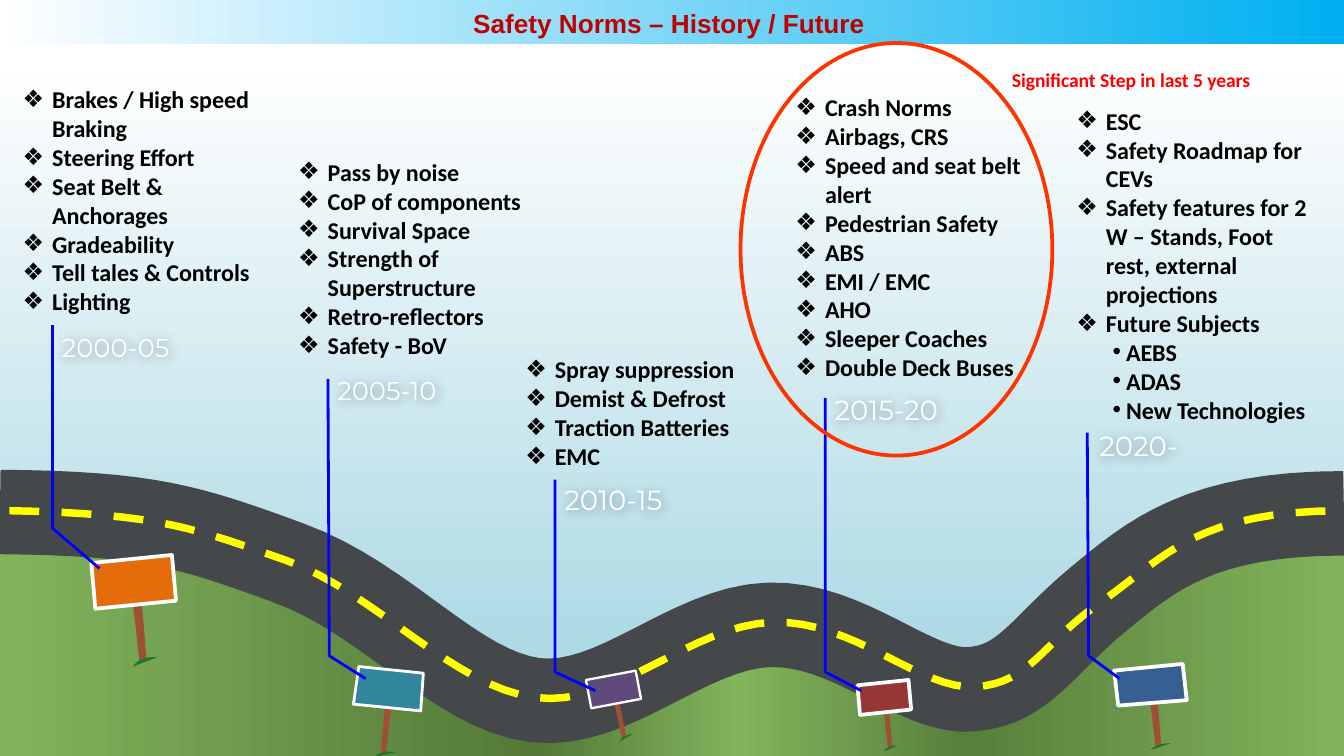
from dataclasses import dataclass

from lxml import etree
from pptx import Presentation
from pptx.dml.color import RGBColor
from pptx.enum.dml import MSO_LINE
from pptx.enum.shapes import MSO_SHAPE
from pptx.enum.text import MSO_ANCHOR, PP_ALIGN
from pptx.oxml.ns import qn
from pptx.util import Cm, Pt

RECT, OVAL = MSO_SHAPE.RECTANGLE, MSO_SHAPE.OVAL
DASH, TOP = MSO_LINE.DASH, MSO_ANCHOR.TOP
LEFT, MID = PP_ALIGN.LEFT, PP_ALIGN.CENTER

WHITE, BLACK = RGBColor(255, 255, 255), RGBColor(0, 0, 0)
SKY, HAZE = RGBColor(0xAE, 0xDA, 0xE5), RGBColor(0xC9, 0xE6, 0xEE)
CYAN = RGBColor(0x00, 0xB0, 0xF0)
GRASS, MOSS = RGBColor(0x82, 0xB4, 0x5C), RGBColor(0x54, 0x79, 0x38)
FERN, LEAF = RGBColor(0x58, 0x7F, 0x3B), RGBColor(0x1E, 0x76, 0x2D)
ROAD, YELLOW = RGBColor(0x45, 0x48, 0x4A), RGBColor(255, 255, 0)
WOOD, BLUE = RGBColor(0xA0, 0x4F, 0x37), RGBColor(0, 0, 255)
RED, WINE = RGBColor(255, 0, 0), RGBColor(0xC0, 0, 0)
FLAME = RGBColor(255, 0x33, 0)

Point = tuple[float, float]
Box = tuple[float, float, float, float]


@dataclass
class Stage:
    year: str
    size: float
    tag: Box
    area: Box
    items: list[str]
    color: RGBColor
    edge: float
    plate: list[Point]
    post: list[Point]
    tuft: list[Point]
    lead: list[Point]
    subs: tuple[str, ...] = ()


STAGES = [
    Stage("2000-05", 13.8, (0.39, 2.48, 0.98, 0.26), (0.07, 0.58, 2.01, 1.84),
          ["Brakes / High speed Braking", "Steering Effort", "Seat Belt & Anchorages",
           "Gradeability", "Tell tales & Controls", "Lighting"],
          RGBColor(0xE4, 0x6C, 0x0A), 2,
          [(1.28, 4.13), (0.68, 4.19), (0.71, 4.53), (1.31, 4.47)],
          [(1.09, 4.91), (1.04, 4.94), (0.98, 4.41), (1.05, 4.41)],
          [(1.17, 4.89), (1.03, 4.88), (0.99, 4.96)],
          [(0.74, 4.23), (0.39, 3.93), (0.39, 2.42)]),
    Stage("2005-10", 13.8, (2.44, 2.8, 0.98, 0.26), (2.12, 1.12, 2.01, 1.62),
          ["Pass by noise", "CoP of components", "Survival Space",
           "Strength of Superstructure", "Retro-reflectors", "Safety - BoV"],
          RGBColor(0x31, 0x85, 0x9C), 1.5,
          [(3.15, 5.01), (2.67, 4.96), (2.63, 5.24), (3.13, 5.29)],
          [(2.87, 5.61), (2.83, 5.63), (2.87, 5.19), (2.92, 5.2)],
          [(2.94, 5.6), (2.84, 5.57), (2.79, 5.63)],
          [(2.72, 5.05), (2.45, 4.88), (2.44, 2.82)]),
    Stage("2010-15", 14.8, (4.13, 3.61, 1.04, 0.27), (3.81, 2.59, 2.01, 0.97),
          ["Spray suppression", "Demist & Defrost", "Traction Batteries", "EMC"],
          RGBColor(0x60, 0x4A, 0x7B), 1.25,
          [(4.73, 4.99), (4.36, 5.06), (4.4, 5.27), (4.77, 5.2)],
          [(4.66, 5.48), (4.63, 5.5), (4.56, 5.18), (4.6, 5.18)],
          [(4.71, 5.46), (4.63, 5.47), (4.61, 5.52)],
          [(4.43, 5.14), (4.13, 5), (4.13, 3.57)]),
    Stage("2015-20", 14.8, (6.14, 2.94, 1.04, 0.27), (5.82, 0.64, 2.01, 2.28),
          ["Crash Norms", "Airbags, CRS", "Speed and seat belt alert",
           "Pedestrian Safety", "ABS", "EMI / EMC", "AHO", "Sleeper Coaches",
           "Double Deck Buses"],
          RGBColor(0x95, 0x37, 0x35), 2,
          [(6.76, 5.06), (6.38, 5.1), (6.4, 5.32), (6.78, 5.28)],
          [(6.64, 5.56), (6.61, 5.58), (6.57, 5.25), (6.61, 5.24)],
          [(6.68, 5.55), (6.6, 5.54), (6.58, 5.59)],
          [(6.41, 5.14), (6.14, 5), (6.14, 2.96)]),
    Stage("2020-", 14.8, (8.11, 3.21, 0.76, 0.27), (7.91, 0.74, 2.01, 2.49),
          ["ESC", "Safety Roadmap for CEVs",
           "Safety features for 2 W – Stands, Foot rest, external projections",
           "Future Subjects"],
          RGBColor(0x37, 0x60, 0x92), 2,
          [(8.8, 4.94), (8.29, 4.99), (8.32, 5.25), (8.83, 5.21)],
          [(8.64, 5.55), (8.6, 5.57), (8.55, 5.16), (8.61, 5.16)],
          [(8.71, 5.53), (8.6, 5.53), (8.56, 5.58)],
          [(8.33, 5.05), (8.1, 4.88), (8.09, 3.22)],
          ("AEBS", "ADAS", "New Technologies")),
]
HILLS = [(0, 3.73), (1.42, 3.83), (3.3, 4.64), (4.09, 5.11), (5.66, 4.46),
         (7.2, 5.08), (8.76, 4.02), (10, 3.73), (10, 5.7), (0, 5.7)]
TRACK = [(0, 3.81), (1.12, 3.82), (1.41, 3.92), (2.15, 4.19), (2.89, 4.46),
         (3.38, 5.13), (3.98, 5.21), (4.57, 5.28), (5.12, 4.67), (5.72, 4.65),
         (6.32, 4.63), (6.81, 5.16), (7.22, 5.13), (7.62, 5.1), (7.74, 4.82),
         (8.16, 4.47), (8.57, 4.13), (8.93, 3.82), (10, 3.82)]
LANE = [(0.07, 3.8), (1.2, 3.82), (1.47, 3.94), (2.13, 4.17), (2.78, 4.4),
        (3.37, 5.11), (3.98, 5.19), (4.58, 5.27), (5.14, 4.65), (5.75, 4.63),
        (6.35, 4.61), (6.85, 5.14), (7.26, 5.11), (7.68, 5.08), (7.75, 4.78),
        (8.22, 4.46), (8.68, 4.13), (8.92, 3.8), (10, 3.8)]


def inch(num: float) -> Cm:
    return Cm(2.54 * num)


def curve(knots: list[Point], steps: int = 16) -> list[Point]:
    """Sample a chain of cubic curves that share their end knots."""
    out = [knots[0]]
    for i in range(0, len(knots) - 1, 3):
        part = knots[i:i + 4]
        for n in range(1, steps + 1):
            t = n / steps
            mix = ((1 - t) ** 3, 3 * t * (1 - t) ** 2, 3 * t * t * (1 - t), t ** 3)
            out.append(tuple(sum(m * p[k] for m, p in zip(mix, part)) for k in (0, 1)))
    return out


def paint(shape, fill=None, line=None, width: float = 1):
    shape.shadow.inherit = False
    if fill is None:
        shape.fill.background()
    else:
        shape.fill.solid()
        shape.fill.fore_color.rgb = fill
    if line is None:
        shape.line.fill.background()
    else:
        shape.line.color.rgb = line
        shape.line.width = Pt(width)
    return shape


def blend(shape, stops: list[tuple[int, RGBColor]], angle: float = 0) -> None:
    """Fill with a gradient; stops are percentages."""
    shape.fill.gradient()
    shape.fill.gradient_angle = angle
    group = shape._element.spPr.find(".//" + qn("a:gsLst"))
    group.clear()
    for pos, color in stops:
        stop = etree.SubElement(group, qn("a:gs"), pos=str(pos * 1000))
        etree.SubElement(stop, qn("a:srgbClr"), val=str(color))


def block(shapes, kind, box: Box, **look):
    return paint(shapes.add_shape(kind, *map(inch, box)), **look)


def trace(shapes, points: list[Point], close: bool = False, **look):
    dots = [(inch(x), inch(y)) for x, y in points]
    pen = shapes.build_freeform(*dots[0])
    pen.add_line_segments(dots[1:], close=close)
    return paint(pen.convert_to_shape(), **look)


def write(para, text: str, size: float = 12.9, font: str = "Calibri",
          color: RGBColor = BLACK, bold: bool = True, align=LEFT,
          space: float = 1, mark: str = "", margin: float = 0, hang: float = 0) -> None:
    para.alignment, para.line_spacing = align, space
    run = para.add_run()
    run.text = text
    run.font.size, run.font.name, run.font.bold = Pt(size), font, bold
    run.font.color.rgb = color
    if mark:
        props = para._p.get_or_add_pPr()
        props.set("marL", str(inch(margin)))
        props.set("indent", str(-inch(hang)))
        etree.SubElement(props, qn("a:buFont"), typeface="Arial")
        etree.SubElement(props, qn("a:buChar"), char=mark)


def frame(shapes, box: Box, wrap: bool = True):
    shape = shapes.add_textbox(*map(inch, box))
    shape.text_frame.word_wrap = wrap
    return shape


def glow(shape) -> None:
    """Give the text of an unfilled box a soft shadow."""
    group = etree.SubElement(shape._element.spPr, qn("a:effectLst"))
    cast = etree.SubElement(group, qn("a:outerShdw"), blurRad="76200",
                            dist="12700", dir="2700000", algn="tl")
    tint = etree.SubElement(cast, qn("a:srgbClr"), val="000000")
    etree.SubElement(tint, qn("a:alpha"), val="40000")


def add_sign(shapes, stage: Stage) -> None:
    start, bend, end = stage.tuft
    trace(shapes, stage.post, close=True, fill=WOOD)
    trace(shapes, stage.plate, close=True, fill=stage.color, line=WHITE, width=stage.edge)
    trace(shapes, curve([start, bend, end, end]), close=True, fill=LEAF)
    trace(shapes, stage.lead, line=BLUE, width=1.5)


def add_text(shapes, stage: Stage) -> None:
    tag = frame(shapes, stage.tag, wrap=False)
    glow(tag)
    body = tag.text_frame
    body.margin_left = body.margin_right = inch(0.07)
    body.margin_top = body.margin_bottom = inch(0.03)
    write(body.paragraphs[0], stage.year, size=stage.size, font="Montserrat",
          color=WHITE, bold=False, space=0.8)
    body = frame(shapes, stage.area).text_frame
    rows = [(item, "❖", 0.22, 0.22) for item in stage.items]
    rows += [(item, "•", 0.37, 0.1) for item in stage.subs]
    for i, (item, mark, margin, hang) in enumerate(rows):
        para = body.add_paragraph() if i else body.paragraphs[0]
        write(para, item, mark=mark, margin=margin, hang=hang)


def main() -> None:
    deck = Presentation()
    deck.slide_width = inch(10)
    deck.slide_height = deck.slide_width * 9 // 16
    shapes = deck.slides.add_slide(deck.slide_layouts[5]).shapes

    blend(block(shapes, RECT, (0, 0, 10, 0.33)), [(0, WHITE), (99, CYAN), (100, CYAN)])
    blend(block(shapes, RECT, (0, 0.42, 10, 5.27)),
          [(0, WHITE), (83, SKY), (100, HAZE)], angle=270)
    blend(trace(shapes, HILLS, close=True),
          [(0, GRASS), (40, MOSS), (55, GRASS), (72, FERN), (100, GRASS)])
    trace(shapes, curve(TRACK), line=ROAD, width=45.25)
    trace(shapes, curve(LANE), line=YELLOW, width=4).line.dash_style = DASH

    for stage in STAGES:
        add_sign(shapes, stage)
        add_text(shapes, stage)

    title = shapes.title
    title.left, title.top, title.width, title.height = map(inch, (2.53, 0.03, 4.95, 0.43))
    title.text_frame.vertical_anchor = TOP
    write(title.text_frame.paragraphs[0], "Safety Norms – History / Future ", size=14,
          font="Arial", color=WINE, align=MID, space=0.9)
    shapes._spTree.append(title._element)

    block(shapes, OVAL, (5.51, 0.32, 2.32, 3.07), line=FLAME, width=2)
    note = frame(shapes, (7.43, 0.46, 2.41, 0.28))
    write(note.text_frame.paragraphs[0], "Significant Step in last 5 years",
          size=10.5, color=RED)
    deck.save("out.pptx")


if __name__ == "__main__":
    main()
